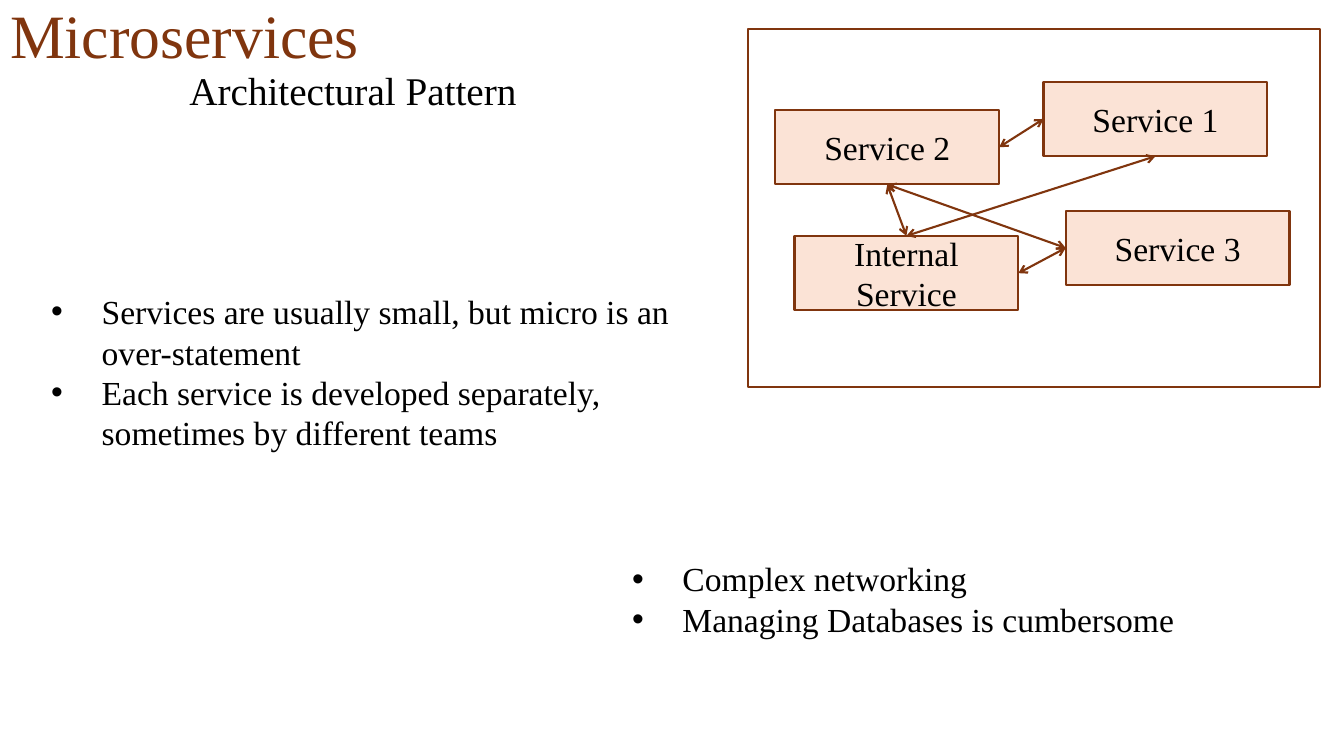
from dataclasses import dataclass

from lxml import etree
from pptx import Presentation, util as u
from pptx.dml.color import RGBColor
from pptx.enum import shapes, text
from pptx.oxml.ns import qn

PX = 9144  # EMU per px, 100 px to the inch
FONT = "Times New Roman"
COLORS = {"brown": "80350E", "peach": "FBE3D6", "black": "000000"}
TOP, LEFT, BOTTOM, RIGHT = range(4)
SERVICE_SIZE = (222, 74)
BULLET_INDENT = 50


@dataclass
class Service:
    label: str
    x: int
    y: int


@dataclass
class Link:
    start: str
    start_side: int
    end: str
    end_side: int


@dataclass
class BulletList:
    x: int
    y: int
    width: int
    height: int
    items: list[str]


SERVICES = [
    Service("Service 1", 1035, 81),
    Service("Service 2", 769, 109),
    Service("Service 3", 1057, 209),
    Service("Internal Service", 788, 234),
]
LINKS = [
    Link("Service 2", BOTTOM, "Internal Service", TOP),
    Link("Service 2", BOTTOM, "Service 3", LEFT),
    Link("Service 2", RIGHT, "Service 1", LEFT),
    Link("Internal Service", TOP, "Service 1", BOTTOM),
    Link("Internal Service", RIGHT, "Service 3", LEFT),
]
BULLET_LISTS = [
    BulletList(41, 284, 679, 172, [
        "Services are usually small, but micro is an over-statement",
        "Each service is developed separately, sometimes by different teams",
    ]),
    BulletList(617, 549, 679, 91, [
        "Complex networking",
        "Managing Databases is cumbersome",
    ]),
]


def rgb(name: str) -> RGBColor:
    return RGBColor.from_string(COLORS[name])


def px(*lengths: int) -> list[int]:
    return [u.Emu(length * PX) for length in lengths]


def add_run(paragraph, words: str, size: int, color: str = "black") -> None:
    run = paragraph.add_run()
    run.text = words
    run.font.name = FONT
    run.font.size = u.Pt(size)
    run.font.color.rgb = rgb(color)


def style_line(line) -> None:
    line.color.rgb = rgb("brown")
    line.width = u.Pt(1.5)


def add_text_frame(slide, x: int, y: int, width: int, height: int):
    frame = slide.shapes.add_textbox(*px(x, y, width, height)).text_frame
    frame.word_wrap = True
    frame.auto_size = text.MSO_AUTO_SIZE.SHAPE_TO_FIT_TEXT
    return frame


def add_box(slide, x: int, y: int, width: int, height: int):
    box = slide.shapes.add_shape(shapes.MSO_SHAPE.RECTANGLE, *px(x, y, width, height))
    box.shadow.inherit = False
    box.fill.background()
    style_line(box.line)
    return box


def add_service(slide, service: Service):
    box = add_box(slide, service.x, service.y, *SERVICE_SIZE)
    box.fill.solid()
    box.fill.fore_color.rgb = rgb("peach")
    box.text_frame.word_wrap = True
    box.text_frame.vertical_anchor = text.MSO_ANCHOR.MIDDLE
    label = box.text_frame.paragraphs[0]
    label.alignment = text.PP_ALIGN.CENTER
    add_run(label, service.label, 24)
    return box


def add_link(slide, link: Link, boxes: dict) -> None:
    arrow = slide.shapes.add_connector(shapes.MSO_CONNECTOR.STRAIGHT, 0, 0, 0, 0)
    arrow.begin_connect(boxes[link.start], link.start_side)
    arrow.end_connect(boxes[link.end], link.end_side)
    style_line(arrow.line)
    outline = arrow.line._get_or_add_ln()
    for end in ("a:headEnd", "a:tailEnd"):
        etree.SubElement(outline, qn(end), type="arrow")
    etree.SubElement(arrow._element.spPr, qn("a:effectLst"))


def add_bullets(slide, bullets: BulletList) -> None:
    frame = add_text_frame(slide, bullets.x, bullets.y, bullets.width, bullets.height)
    for index, item in enumerate(bullets.items):
        paragraph = frame.add_paragraph() if index else frame.paragraphs[0]
        properties = paragraph._p.get_or_add_pPr()
        properties.set("marL", str(BULLET_INDENT * PX))
        properties.set("indent", str(-BULLET_INDENT * PX))
        etree.SubElement(properties, qn("a:buFont"), typeface="Arial")
        etree.SubElement(properties, qn("a:buChar"), char="•")
        add_run(paragraph, item, 24)


def add_title(slide, words: str) -> None:
    title = slide.shapes.title
    title.left, title.top, title.width, title.height = px(0, 0, 380, 145)
    frame = title.text_frame
    frame.auto_size = text.MSO_AUTO_SIZE.NONE
    frame.vertical_anchor = text.MSO_ANCHOR.TOP
    heading = frame.paragraphs[0]
    heading.alignment = text.PP_ALIGN.LEFT
    heading.line_spacing = 0.9
    add_run(heading, words, 44, "brown")


def main() -> None:
    deck = Presentation()
    deck.slide_width, deck.slide_height = px(1333, 750)
    slide = deck.slides.add_slide(deck.slide_layouts.get_by_name("Title Only"))

    # Heading
    add_title(slide, "Microservices")
    subtitle = add_text_frame(slide, 178, 61, 707, 57)
    add_run(subtitle.paragraphs[0], "Architectural Pattern", 28)

    # Service diagram inside its frame
    boxes = {service.label: add_service(slide, service) for service in SERVICES}
    add_box(slide, 742, 29, 567, 355)

    # Remarks
    for bullets in BULLET_LISTS:
        add_bullets(slide, bullets)

    # Links between services
    for link in LINKS:
        add_link(slide, link, boxes)

    deck.save("out.pptx")


if __name__ == "__main__":
    main()
